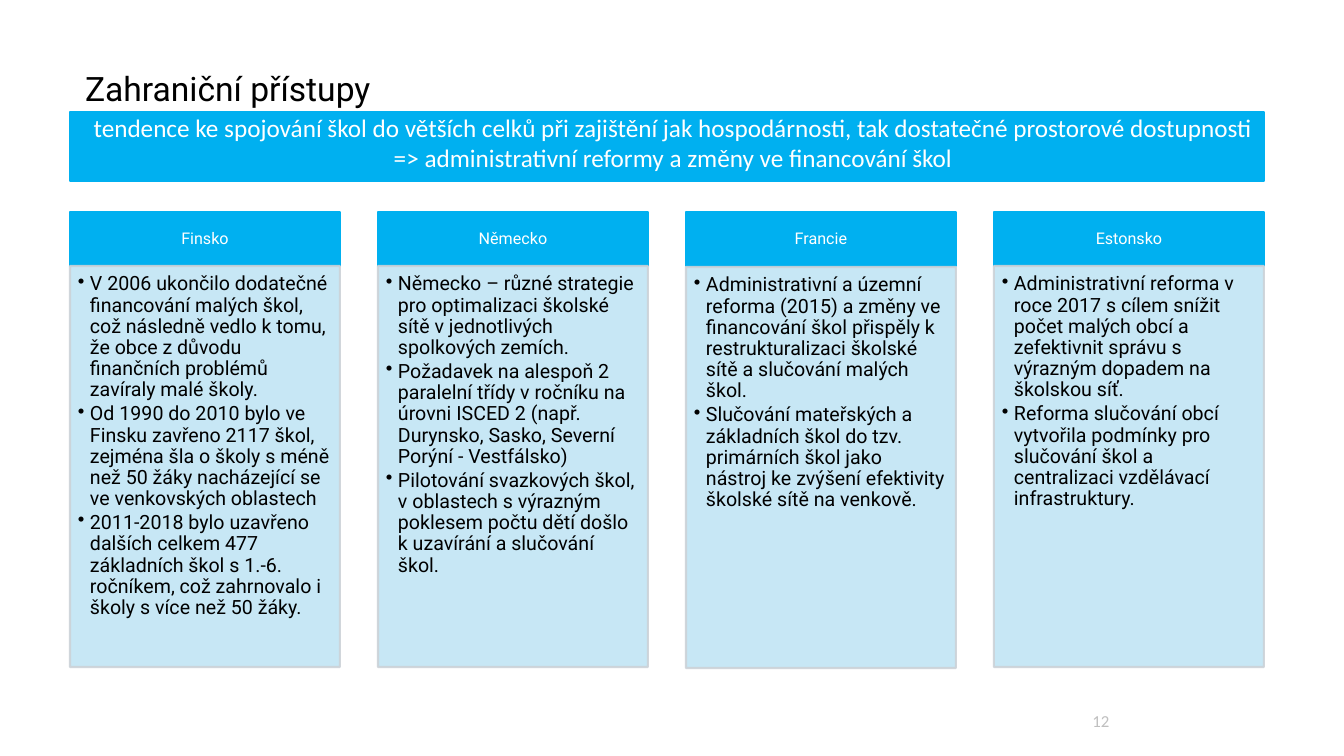
from dataclasses import dataclass

from lxml import etree
from pptx import Presentation
from pptx import util as u
from pptx.dml.color import RGBColor
from pptx.enum import shapes, text
from pptx.oxml import ns

PX = 12192000 / 1344  # EMU in one px

BLUE = RGBColor(0x00, 0xB0, 0xF0)
PALE_BLUE = RGBColor(0xC1, 0xE5, 0xF5)
PALE_GREY = RGBColor(0xCC, 0xD2, 0xD8)
GREY = RGBColor(0xBF, 0xBF, 0xBF)
BLACK = RGBColor(0x00, 0x00, 0x00)
WHITE = RGBColor(0xFF, 0xFF, 0xFF)

LEFT, PITCH, CARD_WIDTH = 70, 308, 270
HEAD_TOP, HEAD_HEIGHT, BODY_HEIGHT = 212, 54, 401
BANNER_WIDTH = 3 * PITCH + CARD_WIDTH
INDENT = 12


@dataclass(frozen=True)
class Box:
    left: int
    top: int
    width: int
    height: int


@dataclass(frozen=True)
class Style:
    font: str
    size: float
    color: RGBColor
    align: text.PP_ALIGN = text.PP_ALIGN.CENTER
    anchor: text.MSO_ANCHOR = text.MSO_ANCHOR.MIDDLE
    margins: tuple[int, int, int, int] = (9, 5, 9, 5)
    line_spacing: float = 0.9
    space_after: int = 0


@dataclass(frozen=True)
class Card:
    country: str
    points: tuple[str, ...]
    body_shift: int = 0


TITLE = Style("Roboto", 24, BLACK, align=text.PP_ALIGN.LEFT, margins=(10, 5, 10, 5))
BANNER = Style("Calibri", 18, WHITE, anchor=text.MSO_ANCHOR.TOP,
               margins=(INDENT, 0, 0, 0), line_spacing=1)
HEAD = Style("Roboto", 11.5, WHITE)
BODY = Style("Roboto", 14, BLACK, text.PP_ALIGN.LEFT, text.MSO_ANCHOR.TOP,
             margins=(8, 8, 10, 12), space_after=2)
NUMBER = Style("Calibri", 12, GREY, line_spacing=1)

CARDS = (
    Card("Finsko", (
        "V 2006 ukončilo dodatečné financování malých škol, což následně vedlo k tomu, "
        "že obce z důvodu finančních problémů zavíraly malé školy.",
        "Od 1990 do 2010 bylo ve Finsku zavřeno 2117 škol, zejména šla o školy s méně "
        "než 50 žáky nacházející se ve venkovských oblastech",
        "2011-2018 bylo uzavřeno dalších celkem 477 základních škol s 1.-6. ročníkem, "
        "což zahrnovalo i školy s více než 50 žáky.")),
    Card("Německo", (
        "Německo – různé strategie pro optimalizaci školské sítě v jednotlivých "
        "spolkových zemích.",
        "Požadavek na alespoň 2 paralelní třídy v ročníku na úrovni ISCED 2 (např. "
        "Durynsko, Sasko, Severní Porýní - Vestfálsko)",
        "Pilotování svazkových škol, v oblastech s výrazným poklesem počtu dětí došlo "
        "k uzavírání a slučování škol.")),
    Card("Francie", (
        "Administrativní a územní reforma (2015) a změny ve financování škol přispěly "
        "k restrukturalizaci školské sítě a slučování malých škol.",
        "Slučování mateřských a základních škol do tzv. primárních škol jako nástroj "
        "ke zvýšení efektivity školské sítě na venkově."), body_shift=1),
    Card("Estonsko", (
        "Administrativní reforma v roce 2017 s cílem snížit počet malých obcí a "
        "zefektivnit správu s výrazným dopadem na školskou síť.",
        "Reforma slučování obcí vytvořila podmínky pro slučování škol a centralizaci "
        "vzdělávací infrastruktury.")),
)


def px(length: int) -> u.Emu:
    return u.Emu(round(length * PX))


def place(box: Box) -> tuple[u.Emu, ...]:
    return px(box.left), px(box.top), px(box.width), px(box.height)


def write(shape, lines: tuple[str, ...], style: Style) -> None:
    frame = shape.text_frame
    frame.text = "\n".join(lines)
    frame.word_wrap = True
    frame.vertical_anchor = style.anchor
    (frame.margin_left, frame.margin_top,
     frame.margin_right, frame.margin_bottom) = map(px, style.margins)
    for para in frame.paragraphs:
        para.alignment = style.align
        para.line_spacing = style.line_spacing
        para.space_after = u.Pt(style.space_after)
        for span in para.runs:
            span.font.name = style.font
            span.font.size = u.Pt(style.size)
            span.font.color.rgb = style.color


def add_bullets(shape) -> None:
    for para in shape.text_frame.paragraphs:
        props = para._p.get_or_add_pPr()
        props.set("marL", str(px(INDENT)))
        props.set("indent", str(-px(INDENT)))
        etree.SubElement(props, ns.qn("a:buChar"), char="•")


def set_opacity(color_format, percent: int) -> None:
    color = color_format._xFill.find(ns.qn("a:srgbClr"))
    etree.SubElement(color, ns.qn("a:alpha"), val=str(percent * 1000))


def add_panel(page, box: Box, fill: RGBColor, line: RGBColor,
              lines: tuple[str, ...], style: Style, opacity: int = 100):
    panel = page.shapes.add_shape(shapes.MSO_SHAPE.RECTANGLE, *place(box))
    panel.shadow.inherit = False
    panel.fill.solid()
    panel.fill.fore_color.rgb = fill
    panel.line.color.rgb = line
    panel.line.width = u.Pt(1.5)
    if opacity < 100:
        for color in panel._element.spPr.iter(ns.qn("a:srgbClr")):
            etree.SubElement(color, ns.qn("a:alpha"), val=str(opacity * 1000))
    write(panel, lines, style)
    return panel


def add_label(page, box: Box, words: str, style: Style) -> None:
    write(page.shapes.add_textbox(*place(box)), (words,), style)


def add_card(page, card: Card, left: int) -> None:
    head = Box(left, HEAD_TOP, CARD_WIDTH, HEAD_HEIGHT)
    body = Box(left, HEAD_TOP + HEAD_HEIGHT + card.body_shift, CARD_WIDTH, BODY_HEIGHT)
    add_panel(page, head, BLUE, BLUE, (card.country,), HEAD)
    add_bullets(add_panel(page, body, PALE_BLUE, PALE_GREY, card.points, BODY, opacity=90))


def main() -> None:
    deck = Presentation()
    deck.slide_width, deck.slide_height = px(1344), px(756)
    page = deck.slides.add_slide(deck.slide_layouts[6])

    # Title and page number
    add_label(page, Box(75, 56, BANNER_WIDTH, 69), "Zahraniční přístupy", TITLE)
    add_label(page, Box(950, 701, 302, 40), "12", NUMBER)

    # One card per country
    for column, card in enumerate(CARDS):
        add_card(page, card, LEFT + column * PITCH)

    # Banner with the common trend
    add_panel(page, Box(LEFT, 112, BANNER_WIDTH, 69), BLUE, BLUE, (
        "tendence ke spojování škol do větších celků při zajištění jak hospodárnosti, "
        "tak dostatečné prostorové dostupnosti => administrativní reformy a změny "
        "ve financování škol",), BANNER)

    deck.save("out.pptx")


if __name__ == "__main__":
    main()
